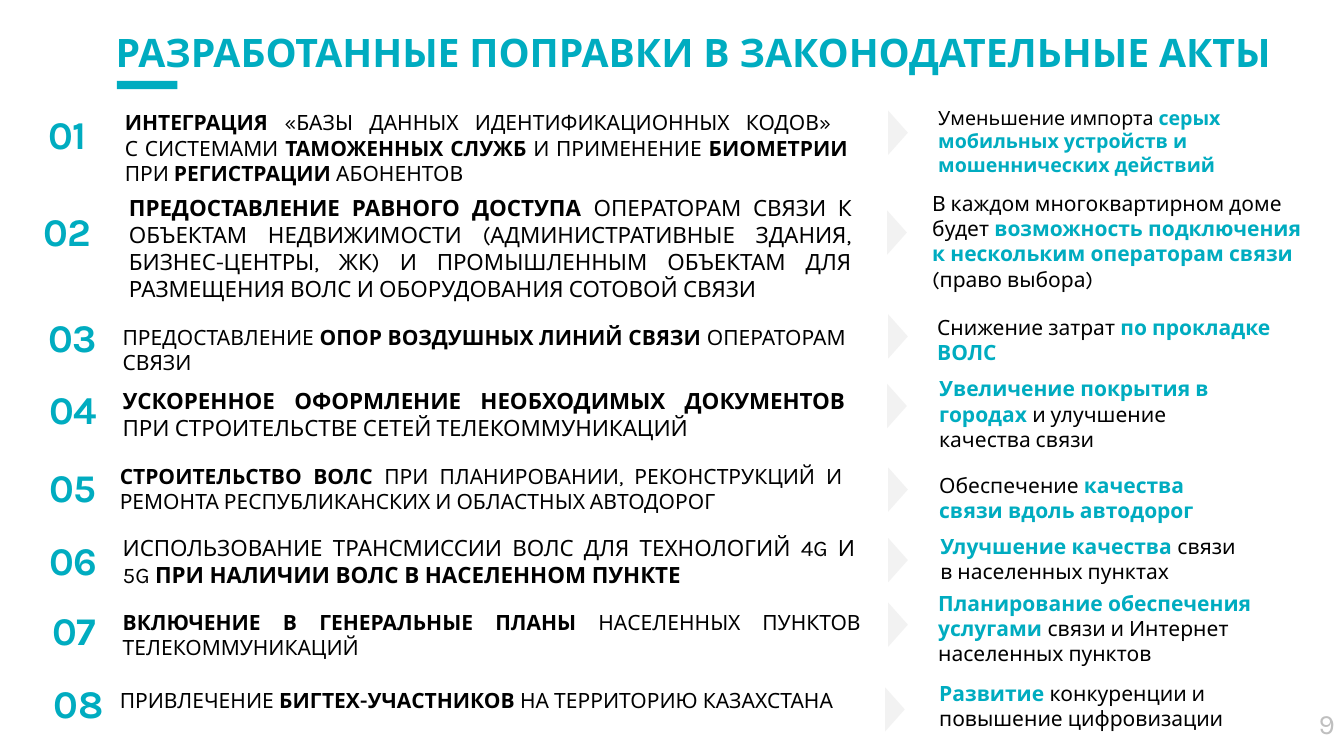
from pptx import Presentation
from pptx.dml.color import RGBColor
from pptx.enum import shapes, text
from pptx.util import Pt

FONT = "Karla"
TEAL, BLACK, PALE, GRAY = "00ACC0", "000000", "F2F2F2", "BFBFBF"
TITLE = "РАЗРАБОТАННЫЕ ПОПРАВКИ В ЗАКОНОДАТЕЛЬНЫЕ АКТЫ"

# Each row: number (left, top), amendment (left, top, width, size, lines, text),
# arrow (left, top), benefit (left, top, width, size, lines, text).
ROWS = [
    ((27.4, 74.9),
     (82.1, 74.9, 530.6, 15, 3,
      "*ИНТЕГРАЦИЯ* «БАЗЫ ДАННЫХ ИДЕНТИФИКАЦИОННЫХ КОДОВ» \nС СИСТЕМАМИ "
      "*ТАМОЖЕННЫХ СЛУЖБ* И ПРИМЕНЕНИЕ *БИОМЕТРИИ* ПРИ *РЕГИСТРАЦИИ* АБОНЕНТОВ"),
     (625.7, 87.8),
     (663.1, 72, 225.4, 14, 3,
      "Уменьшение импорта *серых мобильных устройств и мошеннических действий*")),
    ((23.8, 144.7),
     (85, 135.4, 530.6, 16, 4,
      "*ПРЕДОСТАВЛЕНИЕ РАВНОГО ДОСТУПА *ОПЕРАТОРАМ СВЯЗИ К ОБЪЕКТАМ НЕДВИЖИМОСТИ "
      "(АДМИНИСТРАТИВНЫЕ ЗДАНИЯ, БИЗНЕС-ЦЕНТРЫ, ЖК) И ПРОМЫШЛЕННЫМ ОБЪЕКТАМ "
      "ДЛЯ РАЗМЕЩЕНИЯ ВОЛС И ОБОРУДОВАНИЯ СОТОВОЙ СВЯЗИ"),
     (625, 159.1),
     (658.8, 132.5, 278.6, 15, 4,
      "В каждом многоквартирном доме будет "
      "*возможность подключения к нескольким операторам связи *(право выбора)")),
    ((27.4, 220.3),
     (80.6, 228.2, 530.6, 15, 2,
      "ПРЕДОСТАВЛЕНИЕ *ОПОР ВОЗДУШНЫХ ЛИНИЙ СВЯЗИ *ОПЕРАТОРАМ СВЯЗИ"),
     (625.7, 233.3),
     (662.4, 221, 264.2, 15, 2, "Снижение затрат *по прокладке ВОЛС*")),
    ((28.1, 271.4),
     (80.6, 272.9, 530.6, 16, 2,
      "*УСКОРЕННОЕ ОФОРМЛЕНИЕ НЕОБХОДИМЫХ ДОКУМЕНТОВ *"
      "ПРИ СТРОИТЕЛЬСТВЕ СЕТЕЙ ТЕЛЕКОММУНИКАЦИЙ"),
     (625, 283),
     (663.8, 265, 242.6, 15, 3,
      "*Увеличение покрытия в городах *и улучшение качества связи")),
    ((28.1, 327.6),
     (78.5, 327.6, 530.6, 15, 2,
      "*СТРОИТЕЛЬСТВО ВОЛС *ПРИ ПЛАНИРОВАНИИ, РЕКОНСТРУКЦИЙ И РЕМОНТА "
      "РЕСПУБЛИКАНСКИХ И ОБЛАСТНЫХ АВТОДОРОГ"),
     (625.7, 342.7),
     (663.8, 334.1, 234, 15, 2, "Обеспечение *качества связи вдоль автодорог*")),
    ((28.1, 379.4),
     (80.6, 378, 537.8, 16, 2,
      "ИСПОЛЬЗОВАНИЕ ТРАНСМИССИИ ВОЛС ДЛЯ ТЕХНОЛОГИЙ 4G И 5G "
      "*ПРИ НАЛИЧИИ ВОЛС В НАСЕЛЕННОМ ПУНКТЕ*"),
     (625.7, 393.1),
     (664.6, 377.3, 234, 15, 2, "*Улучшение качества *связи в населенных пунктах")),
    ((30.2, 429.8),
     (80.6, 432, 541.4, 15, 2,
      "*ВКЛЮЧЕНИЕ В ГЕНЕРАЛЬНЫЕ ПЛАНЫ* НАСЕЛЕННЫХ ПУНКТОВ ТЕЛЕКОММУНИКАЦИЙ"),
     (625.7, 439.2),
     (663.1, 418.3, 295.2, 15, 3,
      "*Планирование обеспечения услугами *связи и Интернет населенных пунктов")),
    ((31, 481.7),
     (78.5, 487.4, 542.2, 15, 1,
      "ПРИВЛЕЧЕНИЕ *БИГТЕХ-УЧАСТНИКОВ* НА ТЕРРИТОРИЮ КАЗАХСТАНА"),
     (623.5, 499.7),
     (663.8, 482.4, 295.2, 15, 2, "*Развитие *конкуренции и повышение цифровизации")),
]


def rgb(hex_color):
    return RGBColor.from_string(hex_color)


def add_text(slide, left, top, width, size, lines, content,
             color=BLACK, accent=BLACK, align=None):
    """Add a text box; parts between asterisks are bold in the accent colour."""
    height = lines * size * 1.2 + 7.2
    box = slide.shapes.add_textbox(Pt(left), Pt(top), Pt(width), Pt(height))
    frame = box.text_frame
    frame.word_wrap = True
    frame.auto_size = text.MSO_AUTO_SIZE.SHAPE_TO_FIT_TEXT
    paragraph = frame.paragraphs[0]
    paragraph.alignment = align
    for index, part in enumerate(content.split("*")):
        emphasised = index % 2 == 1
        for line_index, line in enumerate(part.split("\n")):
            if line_index:
                paragraph.add_line_break()
            if not line:
                continue
            run = paragraph.add_run()
            run.text = line
            run.font.name = FONT
            run.font.size = Pt(size)
            run.font.bold = emphasised
            run.font.color.rgb = rgb(accent if emphasised else color)


def add_block(slide, kind, left, top, width, height, color, rotation=0):
    block = slide.shapes.add_shape(kind, Pt(left), Pt(top), Pt(width), Pt(height))
    block.rotation = rotation
    block.shadow.inherit = False
    block.fill.solid()
    block.fill.fore_color.rgb = rgb(color)
    block.line.fill.background()


def add_row(slide, index, number_at, amendment, arrow_at, benefit):
    lines = amendment[4]
    justify = text.PP_ALIGN.JUSTIFY if lines > 1 else None
    add_text(slide, *number_at, 59.8, 28, 1, f"*{index:02d}*", accent=TEAL)
    add_text(slide, *amendment, align=justify)
    add_block(slide, shapes.MSO_SHAPE.ISOSCELES_TRIANGLE, *arrow_at, 31.5, 14, PALE, 90)
    add_text(slide, *benefit, accent=TEAL)


def main():
    deck = Presentation()
    deck.slide_width, deck.slide_height = Pt(960), Pt(540)
    slide = deck.slides.add_slide(deck.slide_layouts[6])
    add_text(slide, 75.6, 16.6, 902.9, 28, 1, f"*{TITLE}*", accent=TEAL)
    add_block(slide, shapes.MSO_SHAPE.RECTANGLE, 83.5, 57.8, 43.2, 5.8, TEAL)
    for index, row in enumerate(ROWS, start=1):
        add_row(slide, index, *row)
    add_text(slide, 911.5, 501.1, 49, 20, 1, "9", color=GRAY, align=text.PP_ALIGN.RIGHT)
    deck.save("out.pptx")


if __name__ == "__main__":
    main()
